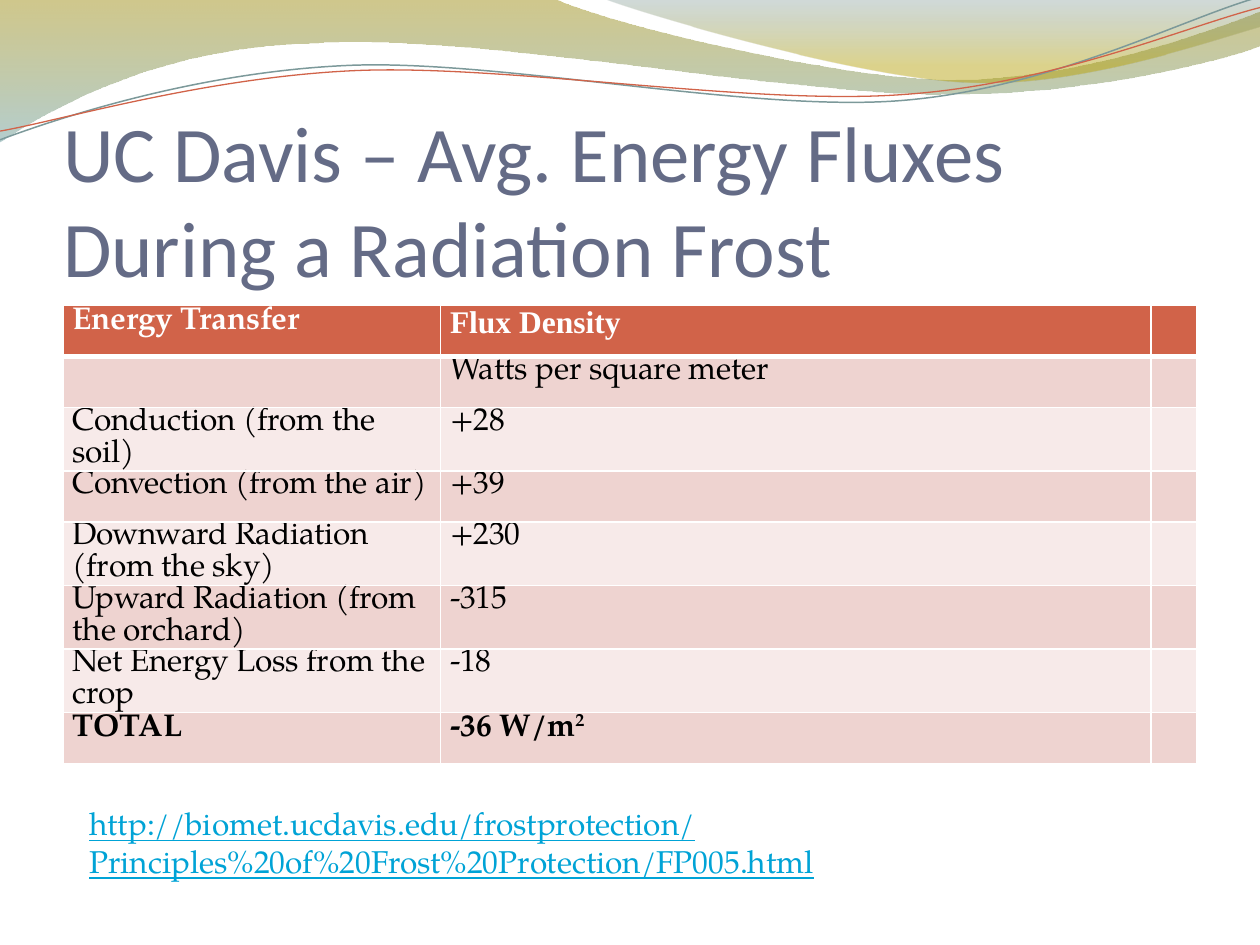
from lxml import etree
from pptx import Presentation
from pptx.dml.color import RGBColor
from pptx.enum.text import MSO_ANCHOR, MSO_AUTO_SIZE, PP_ALIGN
from pptx.oxml.ns import qn
from pptx.util import Pt

BOTTOM, NO_FIT, LEFT = MSO_ANCHOR.BOTTOM, MSO_AUTO_SIZE.NONE, PP_ALIGN.LEFT
SERIF, HEAD_SERIF, SANS = "TeX Gyre Pagella", "Times New Roman", "Calibri"
COLORS = {
    "title": "646B86", "link": "00A3D6", "text": "000000", "white": "FFFFFF",
    "header": "D16349", "band": "EED3D0", "light": "F7EAE9",
    "olive": "978500", "teal": "77A5A6", "slate": "648484", "gold": "B49F00",
    "teal_line": "7C999A", "red_line": "D16349",
}
WAVES = [
    ([(0, 0), (316.8, -0.7), (342.7, 12.2, 478.1, 45.4, 545.8, 45.4),
      (614.2, 45.4, 689.8, 18.7, 720, 6.5), (720.7, 25.9),
      (707.8, 31.7, 626.4, 54.7, 537.1, 54), (447.8, 54, 275, 20.2, 185, 24.5),
      (92.9, 25.9, 33.1, 59.8, -0.7, 81.4)],
     [(0, "olive", 45), (1, "teal", 55)]),
    ([(344.9, -0.7), (366.5, 7.9, 491, 44.6, 553.7, 46.8),
      (616.3, 49.7, 691.9, 23, 720, 15.1), (720, 0)],
     [(0, "slate", 30), (0.8, "gold", 45)]),
]
LINES = [
    ([(0, 79.9), (34.6, 67, 113.8, 41, 199.4, 37.4),
      (284.4, 33.8, 427, 64.1, 513.4, 57.6),
      (599.8, 51.1, 675.4, 10.8, 718.6, -1.4)], "teal_line", 0.85),
    ([(0, 74.9), (33.8, 69.1, 118.1, 43.9, 203.8, 40.3),
      (290.2, 36.7, 429.8, 60.5, 516.2, 54),
      (601.9, 48.2, 677.5, 15.1, 720, 4.3)], "red_line", 0.75),
]
ROWS = [
    ("Energy Transfer", "Flux Density"),
    ("", "Watts per square meter"),
    ("Conduction (from the soil)", "+28"),
    ("Convection (from the air)", "+39"),
    ("Downward Radiation (from the sky)", "+230"),
    ("Upward Radiation (from the orchard)", "-315"),
    ("Net Energy Loss from the crop", "-18"),
    ("TOTAL", "-36 W/m"),
]


def rgb(name):
    """Return the named colour."""
    return RGBColor.from_string(COLORS[name])


def style(r, size, font, color, bold=False):
    """Format one run."""
    r.font.size, r.font.name, r.font.bold = Pt(size), font, bold
    r.font.color.rgb = rgb(color)


def add_outline(s, left, top, segments, close):
    """Draw an outline of straight and cubic segments offset by left and top."""
    start, *rest = [[(Pt(left + x), Pt(top + y)) for x, y in zip(seg[::2], seg[1::2])]
                    for seg in segments]
    builder = s.shapes.build_freeform(*start[0])
    builder.add_line_segments([points[-1] for points in rest], close=close)
    sp = builder.convert_to_shape()
    sp.shadow.inherit = False
    for ln, points in zip(list(sp._element.iter(qn("a:lnTo"))), rest):
        if len(points) == 3:
            curve = etree.Element(qn("a:cubicBezTo"))
            for x, y in points:
                etree.SubElement(curve, qn("a:pt"), x=str(x - sp.left), y=str(y - sp.top))
            ln.getparent().replace(ln, curve)
    return sp


def add_waves(s, left, top):
    """Draw the translucent waves and the two thin lines over them."""
    for segments, stops in WAVES:
        sp = add_outline(s, left, top, segments, True)
        sp.line.fill.background()
        sp.fill.gradient()
        sp.fill.gradient_angle = 270
        for stop, (position, color, _) in zip(sp.fill.gradient_stops, stops):
            stop.position, stop.color.rgb = position, rgb(color)
        clrs = sp._element.spPr.iter(qn("a:srgbClr"))
        for clr, (_, _, opacity) in zip(list(clrs), stops):
            etree.SubElement(clr, qn("a:alpha")).set("val", str(opacity * 1000))
    for segments, color, width in LINES:
        sp = add_outline(s, left, top, segments, False)
        sp.fill.background()
        sp.line.color.rgb, sp.line.width = rgb(color), Pt(width)


def add_title(s, left, top, width, height):
    """Place and format the title."""
    sp = s.shapes.title
    sp.left, sp.top, sp.width, sp.height = Pt(left), Pt(top), Pt(width), Pt(height)
    tf = sp.text_frame
    tf.text = "UC Davis – Avg. Energy Fluxes During a Radiation Frost"
    tf.auto_size, tf.vertical_anchor, tf.word_wrap = NO_FIT, BOTTOM, True
    tf.margin_left = tf.margin_right = tf.margin_bottom = 0
    tf.margin_top = Pt(3.6)
    p = tf.paragraphs[0]
    p.alignment = LEFT
    style(p.runs[0], 45, SANS, "title")


def set_borders(cell, row):
    """Give a cell white borders, thick between header and body."""
    widths = {"L": 1, "R": 1, "T": 3 if row == 1 else 1, "B": 3 if row == 0 else 1}
    tcPr = cell._tc.get_or_add_tcPr()
    for i, (side, width) in enumerate(widths.items()):
        ln = etree.Element(qn(f"a:ln{side}"), w=str(Pt(width)))
        fill = etree.SubElement(ln, qn("a:solidFill"))
        etree.SubElement(fill, qn("a:srgbClr")).set("val", COLORS["white"])
        tcPr.insert(i, ln)


def add_flux_table(s, left, top, width, row_height):
    """Build the table of energy fluxes."""
    col_widths = [215.8, 406, width - 621.8]
    last = len(ROWS) - 1
    table = s.shapes.add_table(len(ROWS), len(col_widths), Pt(left), Pt(top),
                               Pt(width), Pt(row_height * len(ROWS))).table
    for column, col_width in zip(table.columns, col_widths):
        column.width = Pt(col_width)
    for i, texts in enumerate(ROWS):
        table.rows[i].height = Pt(row_height)
        for j, text in enumerate(texts + ("",)):
            cell = table.cell(i, j)
            cell.fill.solid()
            cell.fill.fore_color.rgb = rgb("header" if i == 0 else "band" if i % 2 else "light")
            set_borders(cell, i)
            cell.margin_left = cell.margin_right = Pt(5.4)
            cell.margin_top = cell.margin_bottom = 0
            if not text:
                continue
            p = cell.text_frame.paragraphs[0]
            p.text = text
            r = p.runs[0]
            font = HEAD_SERIF if (i, j) == (0, 1) else SERIF
            style(r, 18, font, "text" if i else "white", i in (0, last))
            if font == SERIF:
                p.line_spacing = Pt(18.15)
                r._r.get_or_add_rPr().set("spc", "0" if i == last else "-10")
    r = table.cell(last, 1).text_frame.paragraphs[0].add_run()
    r.text = "2"
    style(r, 18, SERIF, "text", True)
    r._r.get_or_add_rPr().set("baseline", "30000")


def add_source(s, left, top, width, height):
    """Write the underlined address of the data."""
    tf = s.shapes.add_textbox(Pt(left), Pt(top), Pt(width), Pt(height)).text_frame
    tf.word_wrap = True
    tf.text = ("http://biomet.ucdavis.edu/frostprotection/"
               "Principles%20of%20Frost%20Protection/FP005.html")
    r = tf.paragraphs[0].runs[0]
    style(r, 18, SERIF, "link")
    r.font.underline = True


def main():
    """Build the slide and save it."""
    prs = Presentation()
    prs.slide_width, prs.slide_height = Pt(720), Pt(540)
    s = prs.slides.add_slide(prs.slide_layouts[5])
    add_waves(s, 0, 0)
    add_title(s, 36, 77.6, 648, 90)
    add_flux_table(s, 36, 174.6, 648, 29.1)
    add_source(s, 44, 456, 629, 51)
    prs.save("out.pptx")


if __name__ == "__main__":
    main()
